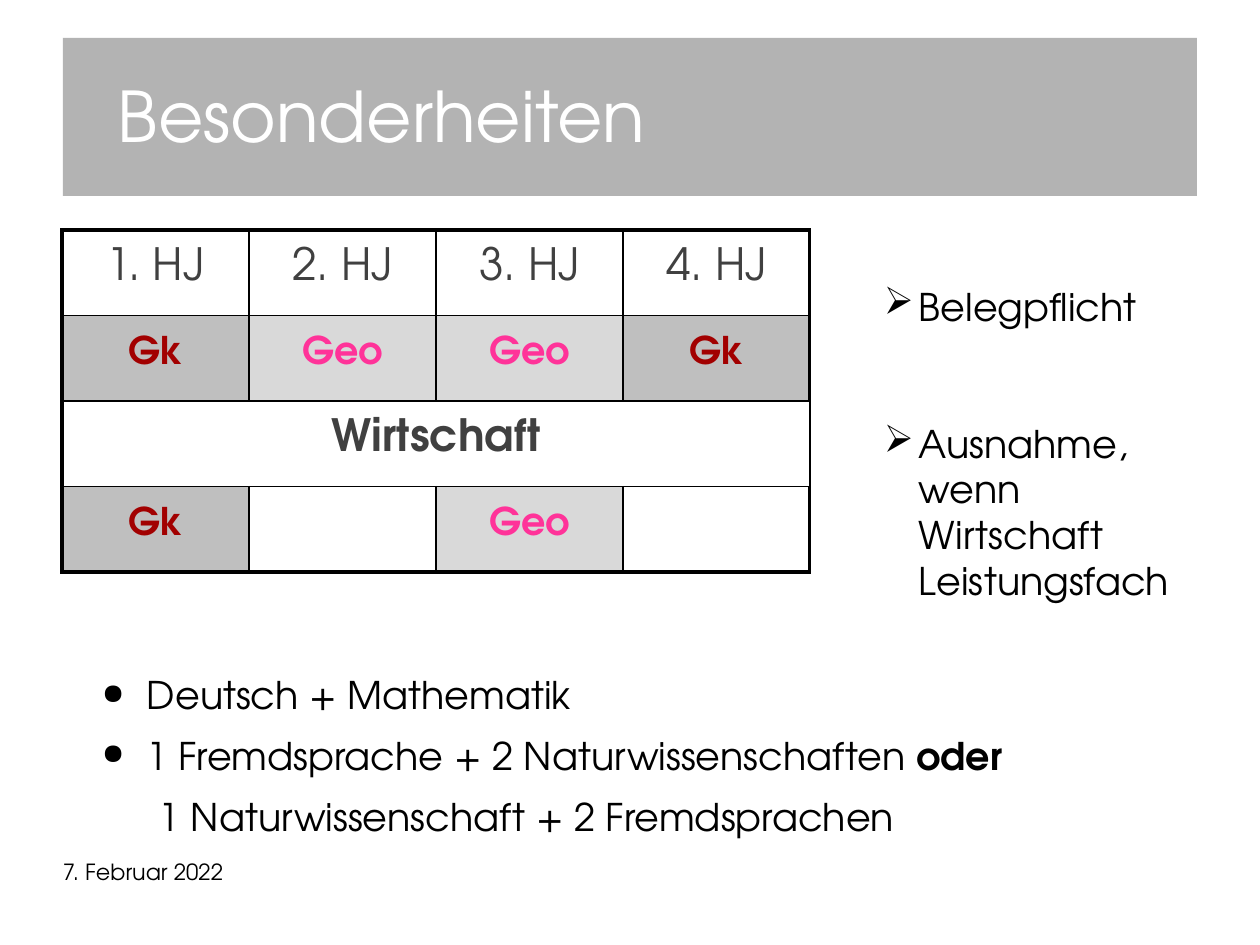
from dataclasses import dataclass

from lxml import etree
from pptx import Presentation
from pptx.dml.color import RGBColor
from pptx.enum.shapes import MSO_SHAPE
from pptx.enum.text import MSO_ANCHOR, PP_ALIGN
from pptx.oxml.ns import qn
from pptx.util import Emu, Pt

RECT = MSO_SHAPE.RECTANGLE
TOP, MIDDLE = MSO_ANCHOR.TOP, MSO_ANCHOR.MIDDLE
LEFT, CENTER = PP_ALIGN.LEFT, PP_ALIGN.CENTER
EMU_PER_PX = 8000


@dataclass(frozen=True)
class Theme:
    font: str = "TeX Gyre Adventor"
    black: str = "000000"
    white: str = "FFFFFF"
    banner: str = "B3B3B3"
    gray_text: str = "404040"
    red: str = "A20000"
    pink: str = "FF3399"
    dark_cell: str = "BFBFBF"
    light_cell: str = "D9D9D9"
    title_size: int = 44
    head_size: int = 28
    body_size: int = 24
    date_size: int = 14
    thin: float = 1
    thick: float = 2.25
    tight: float = 0.93


def px(n):
    return Emu(n * EMU_PER_PX)


def rgb(color):
    return RGBColor.from_string(color)


class SlideBuilder:
    def __init__(self, slide, theme):
        self.slide = slide
        self.theme = theme

    def run(self, p, text, size, color, bold=False):
        r = p.add_run()
        r.text = text
        r.font.name = self.theme.font
        r.font.size = Pt(size)
        r.font.bold = bold
        r.font.color.rgb = rgb(color)

    def frame(self, tf, margins, anchor=TOP):
        """Set wrapping, anchor and margins (left, top, right, bottom)."""
        tf.word_wrap = True
        tf.vertical_anchor = anchor
        tf.margin_left, tf.margin_top, tf.margin_right, tf.margin_bottom = map(px, margins)

    def bullet(self, p, char, percent):
        pPr = p._p.get_or_add_pPr()
        color = etree.SubElement(pPr, qn("a:buClr"))
        etree.SubElement(color, qn("a:srgbClr"), val=self.theme.black)
        etree.SubElement(pPr, qn("a:buSzPct"), val=str(percent * 1000))
        etree.SubElement(pPr, qn("a:buChar"), char=char)

    def indent(self, p, left, first=0):
        pPr = p._p.get_or_add_pPr()
        pPr.set("marL", str(px(left)))
        pPr.set("indent", str(px(first)))

    def banner(self, text, box):
        t = self.theme
        sp = self.slide.shapes.add_shape(RECT, *map(px, box))
        sp.shadow.inherit = False
        sp.fill.solid()
        sp.fill.fore_color.rgb = rgb(t.banner)
        sp.line.fill.background()
        self.frame(sp.text_frame, (23, 5, 23, 0), MIDDLE)
        p = sp.text_frame.paragraphs[0]
        self.indent(p, 32)
        p.alignment = LEFT
        p.line_spacing = t.tight
        self.run(p, text, t.title_size, t.white)

    def text(self, paragraphs, box, size, margins=(0, 0, 0, 0), gap=0, spacing=1.0):
        """Add paragraphs given as (runs, bullet or None, left, first indent)."""
        tf = self.slide.shapes.add_textbox(*map(px, box)).text_frame
        self.frame(tf, margins)
        for i, (runs, bullet, left, first) in enumerate(paragraphs):
            p = tf.add_paragraph() if i else tf.paragraphs[0]
            self.indent(p, left, first)
            if bullet:
                self.bullet(p, *bullet)
            p.line_spacing = spacing
            if i:
                p.space_before = Pt(gap)
            for words, bold in runs:
                self.run(p, words, size, self.theme.black, bold)

    def borders(self, cell, widths):
        """Draw the left, right, top and bottom borders."""
        tcPr = cell._tc.get_or_add_tcPr()
        for i, (side, width) in enumerate(zip("LRTB", widths)):
            ln = etree.Element(qn(f"a:ln{side}"), w=str(Pt(width)))
            fill = etree.SubElement(ln, qn("a:solidFill"))
            etree.SubElement(fill, qn("a:srgbClr"), val=self.theme.black)
            tcPr.insert(i, ln)

    def table(self, rows, box, merged_row):
        """Add rows of (text, size, colour, bold, fill) cells with a thick frame."""
        t = self.theme
        n_rows, n_cols = len(rows), len(rows[0])
        table = self.slide.shapes.add_table(n_rows, n_cols, *map(px, box)).table
        table.first_row = table.horz_banding = False
        for i, row in enumerate(rows):
            for j, (text, size, color, bold, fill) in enumerate(row):
                cell = table.cell(i, j)
                cell.fill.solid()
                cell.fill.fore_color.rgb = rgb(fill)
                edges = (j == 0, j == n_cols - 1, i == 0, i == n_rows - 1)
                self.borders(cell, [t.thick if edge else t.thin for edge in edges])
                cell.vertical_anchor = MIDDLE
                cell.margin_left = cell.margin_right = px(11)
                cell.margin_top, cell.margin_bottom = px(6), px(15)
                p = cell.text_frame.paragraphs[0]
                p.alignment = CENTER
                if text:
                    self.run(p, text, size, color, bold)
        table.cell(merged_row, 0).merge(table.cell(merged_row, n_cols - 1))


def main():
    prs = Presentation()
    prs.slide_width, prs.slide_height = px(1260), px(945)
    t = Theme()
    s = SlideBuilder(prs.slides.add_slide(prs.slide_layouts[6]), t)

    s.banner("Besonderheiten", (63, 38, 1134, 158))

    gk = ("Gk", t.body_size, t.red, True, t.dark_cell)
    geo = ("Geo", t.body_size, t.pink, True, t.light_cell)
    empty = ("", t.body_size, t.black, False, t.white)
    economics = ("Wirtschaft", t.head_size, t.gray_text, True, t.white)
    terms = [(f"{n}. HJ", t.head_size, t.gray_text, False, t.white) for n in range(1, 5)]
    rows = [terms, [gk, geo, geo, gk], [economics] + [empty] * 3, [gk, empty, geo, empty]]
    s.table(rows, (62, 230, 748, 342), merged_row=2)

    arrow, dot = ("➢", 100), ("●", 75)
    s.text([([("Belegpflicht", False)], arrow, 35, -35),
            ([("Ausnahme, wenn Wirtschaft Leistungsfach", False)], arrow, 35, -35)],
           (873, 277, 342, 335), t.body_size, margins=(11, 6, 11, 6), gap=57.6)

    s.text([([("Deutsch + Mathematik", False)], dot, 112, -45),
            ([("1 Fremdsprache + 2 Naturwissenschaften ", False), ("oder", True)], dot, 112, -45),
            ([("1 Naturwissenschaft + 2 Fremdsprachen", False)], None, 124, 0)],
           (35, 676, 1134, 180), t.body_size, gap=11.4, spacing=t.tight)

    s.text([([("7. Februar 2022", False)], None, 0, 0)],
           (63, 861, 294, 65), t.date_size, spacing=t.tight)

    prs.save("out.pptx")


if __name__ == "__main__":
    main()
